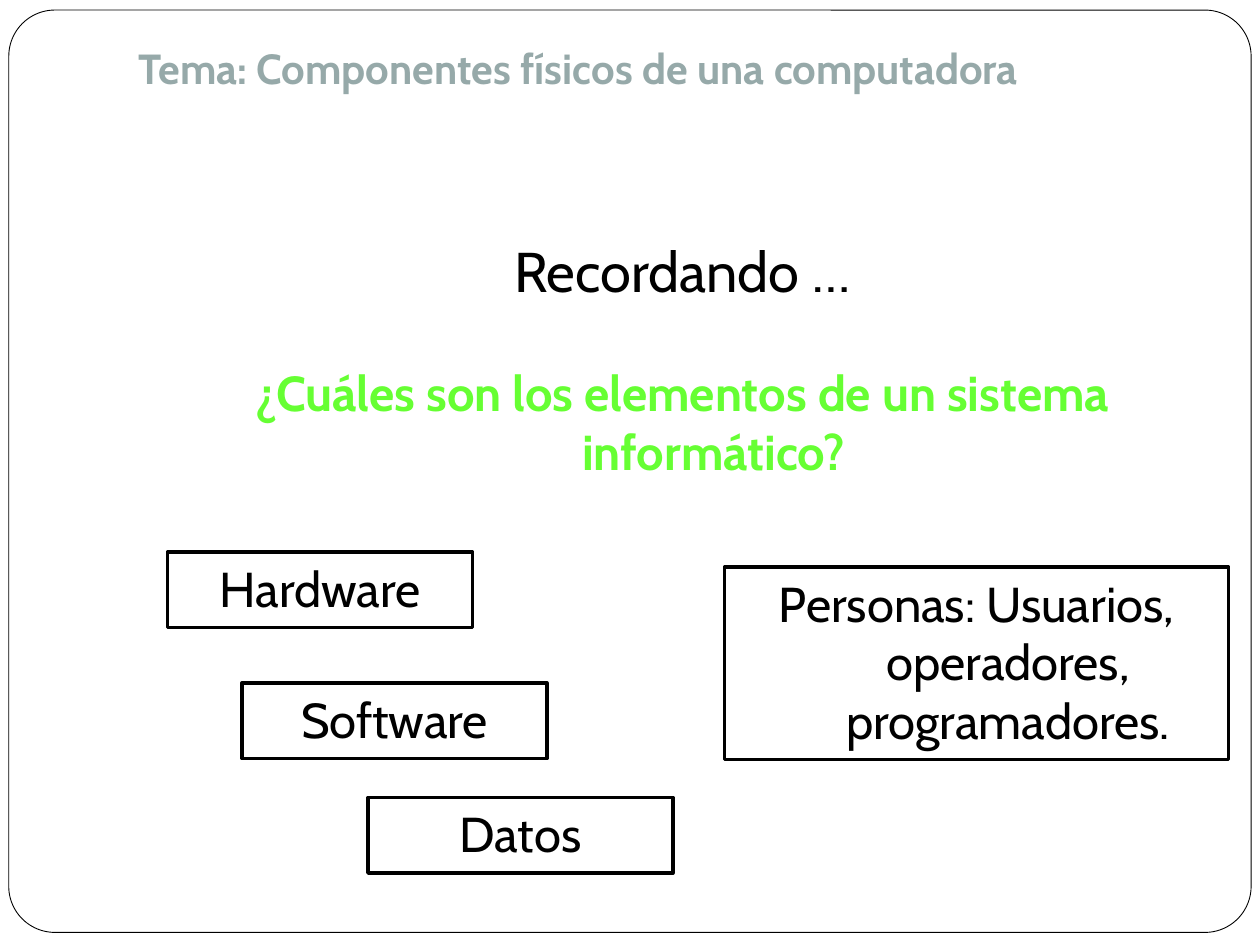
from dataclasses import dataclass

import lxml.etree
import pptx
import pptx.dml.color
import pptx.enum.shapes
import pptx.enum.text
import pptx.oxml.ns
import pptx.slide
import pptx.util

Inches = pptx.util.Inches
Pt = pptx.util.Pt
RGBColor = pptx.dml.color.RGBColor
MSO_SHAPE = pptx.enum.shapes.MSO_SHAPE
PP_ALIGN = pptx.enum.text.PP_ALIGN

FONT = "Cabin"
BLACK = RGBColor(0x00, 0x00, 0x00)
WHITE = RGBColor(0xFF, 0xFF, 0xFF)
GRAY = RGBColor(0x96, 0xA9, 0xA9)
GREEN = RGBColor(0x66, 0xFF, 0x33)


@dataclass
class Label:
    text: str
    left: float
    top: float
    width: float
    height: float
    size: float = 28
    color: RGBColor = BLACK
    bold: bool = False
    centered: bool = True
    hanging: bool = True
    wrap: bool = True
    boxed: bool = False


@dataclass
class Element(Label):
    boxed: bool = True


LABELS = [
    Label("Tema: Componentes físicos de una computadora", 1, 0.29, 8.34, 0.5,
          size=24, color=GRAY, bold=True, centered=False, hanging=False, wrap=False),
    Label("¿Cuáles son los elementos de un sistema informático?", 1, 2.83, 8.83, 1.03,
          color=GREEN, bold=True),
    Label("Recordando …", 1, 1.83, 8.83, 0.63, size=32, hanging=False),
    Element("Hardware", 1.33, 4.38, 2.42, 0.6),
    Element("Software", 1.92, 5.42, 2.42, 0.6),
    Element("Datos", 2.92, 6.33, 2.42, 0.6),
    Element("Personas: Usuarios, operadores, programadores.", 5.75, 4.5, 4, 1.53),
]


def add_frame(s: pptx.slide.Slide) -> None:
    sp = s.shapes.add_shape(MSO_SHAPE.ROUNDED_RECTANGLE, Inches(0.07), Inches(0.08),
                            Inches(9.86), Inches(7.32))
    sp.adjustments[0] = 0.05
    sp.shadow.inherit = False
    sp.fill.solid()
    sp.fill.fore_color.rgb = WHITE
    sp.line.color.rgb = BLACK
    sp.line.width = Pt(0.5)


def set_hanging(p) -> None:
    qn = pptx.oxml.ns.qn
    pPr = p._p.get_or_add_pPr()
    pPr.set("marL", str(Inches(0.5)))
    pPr.set("indent", str(-Inches(0.5)))
    spacing = lxml.etree.Element(qn("a:spcBef"))
    lxml.etree.SubElement(spacing, qn("a:spcPct"), val="20000")
    pPr.insert(0, spacing)


def add_label(s: pptx.slide.Slide, label: Label) -> None:
    box = [Inches(v) for v in (label.left, label.top, label.width, label.height)]
    if label.boxed:
        sp = s.shapes.add_shape(MSO_SHAPE.RECTANGLE, *box)
        sp.shadow.inherit = False
        sp.fill.background()
        sp.line.color.rgb = BLACK
        sp.line.width = Pt(2)
    else:
        sp = s.shapes.add_textbox(*box)
    tf = sp.text_frame
    tf.word_wrap = label.wrap
    tf.auto_size = pptx.enum.text.MSO_AUTO_SIZE.SHAPE_TO_FIT_TEXT
    tf.vertical_anchor = pptx.enum.text.MSO_ANCHOR.TOP
    p = tf.paragraphs[0]
    p.text = label.text
    p.alignment = PP_ALIGN.CENTER if label.centered else PP_ALIGN.LEFT
    p.font.name = FONT
    p.font.size = Pt(label.size)
    p.font.bold = label.bold
    p.font.color.rgb = label.color
    if label.hanging:
        set_hanging(p)


def main() -> None:
    prs = pptx.Presentation()
    prs.slide_width, prs.slide_height = Inches(10), Inches(7.5)
    s = prs.slides.add_slide(prs.slide_layouts[6])
    add_frame(s)
    for label in LABELS:
        add_label(s, label)
    prs.save("out.pptx")


if __name__ == "__main__":
    main()
